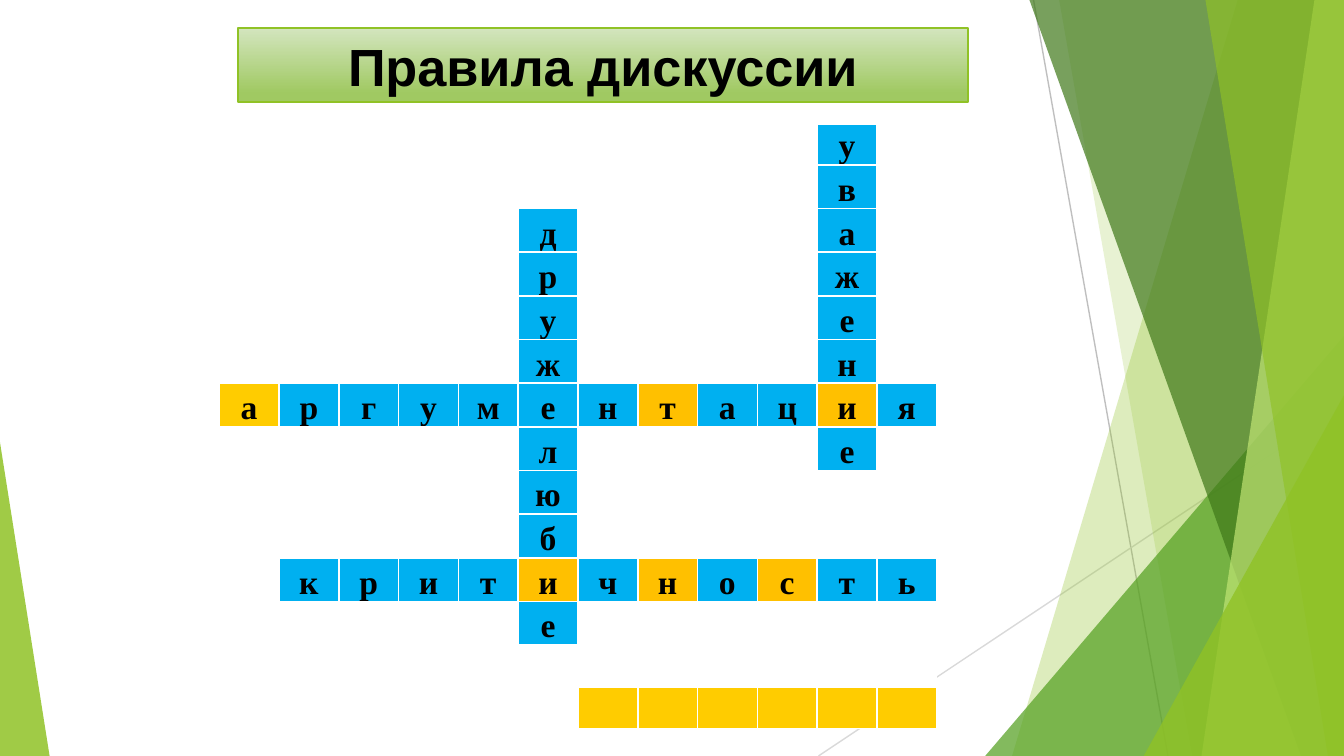
from lxml import etree
from pptx import Presentation
from pptx.dml.color import RGBColor
from pptx.enum import shapes, text
from pptx.oxml.ns import qn
from pptx.util import Pt

# Content: word, row, column, step down, step right
TITLE = "Правила дискуссии"
WORDS = [
    ("уважение", 0, 10, 1, 0),
    ("дружелюбие", 2, 5, 1, 0),
    ("аргументация", 6, 0, 0, 1),
    ("критичность", 10, 1, 0, 1),
]
KEY_LETTERS = [(6, 7), (6, 10), (10, 5), (10, 7), (10, 9)]
ANSWER_CELLS = [(6, 0)] + [(13, col) for col in range(6, 12)]

THEME = {
    "title_font": "Arial", "title_size": 28,
    "letter_font": "Times New Roman", "letter_size": 18, "empty_size": 10,
    "ink": "000000", "paper": "FFFFFF", "green": "90C226",
    "letter": "00B0F0", "key": "FFC000", "answer": "FFCC00",
    "title_top": "D3E5BE", "title_bottom": "A0C962",
}

# Layout, in points
WIDTH, HEIGHT = 720, 405
TITLE_BOX = (127.44, 15.12, 391, 39.6)
GRID_LEFT, GRID_TOP, GRID_WIDTH = 117.4, 66.4, 384.6
COLUMNS = 12
ROWS = [22] + [23.4] * 11 + [22.3] * 2

# Background: lines, bands reaching the right edge, corner triangles
LINES = [((553.7, 0), (625.7, HEIGHT), "BFBFBF"),
         ((WIDTH, 217.4), (438.5, HEIGHT), "D9D9D9")]
# Kind, geometry, colour, opacity %
# band: left edge at top, at bottom; triangle: left, top, width, apex position
FACETS = [
    ("band", (663.1, 542.2), THEME["green"], 30),
    ("band", (567.4, 638.6), THEME["green"], 20),
    ("triangle", (527.8, 180, 192.2, 1), "54A021", 72),
    ("band", (551.5, 697), "3F7819", 70),
    ("band", (704.2, 643.7), "C0E474", 70),
    ("band", (645.8, 711.4), THEME["green"], 65),
    ("triangle", (612.7, 211.7, 107.3, 1), THEME["green"], 80),
    ("triangle", (0, 236.9, 26.6, 0), THEME["green"], 85),
]


def rgb(value):
    return RGBColor.from_string(value)


def paint(fill, color):
    fill.solid()
    fill.fore_color.rgb = rgb(color)


def add_text(p, content, font, size):
    p.alignment = text.PP_ALIGN.CENTER
    r = p.add_run()
    r.text = content
    r.font.name, r.font.size, r.font.bold = font, Pt(size), True
    r.font.color.rgb = rgb(THEME["ink"])


def add_line(s, start, end, color):
    line = s.shapes.add_connector(shapes.MSO_CONNECTOR.STRAIGHT,
                                  *map(Pt, start + end))
    line.line.color.rgb = rgb(color)
    line.line.width = Pt(0.75)
    etree.SubElement(line._element.spPr, qn("a:effectLst"))


def add_facet(s, kind, geometry, color, opacity):
    if kind == "band":
        top, bottom = geometry
        outline = s.shapes.build_freeform(Pt(top), 0)
        outline.add_line_segments([(Pt(x), Pt(y)) for x, y in (
            (WIDTH, 0), (WIDTH, HEIGHT), (bottom, HEIGHT))])
        sp = outline.convert_to_shape()
    else:
        left, top, width, apex = geometry
        sp = s.shapes.add_shape(shapes.MSO_SHAPE.ISOSCELES_TRIANGLE, Pt(left),
                                Pt(top), Pt(width), Pt(HEIGHT - top))
        sp.adjustments[0] = apex
    sp.shadow.inherit = False
    sp.line.fill.background()
    paint(sp.fill, color)
    clr = sp._element.spPr.find(".//" + qn("a:srgbClr"))
    etree.SubElement(clr, qn("a:alpha"), val=str(opacity * 1000))


def format_title(s):
    sp = s.shapes.title
    s.shapes._spTree.append(sp._element)  # in front of the background
    sp.left, sp.top, sp.width, sp.height = map(Pt, TITLE_BOX)
    sp.fill.gradient()
    sp.fill.gradient_angle = 270
    first, last = sp.fill.gradient_stops
    first.color.rgb, first.position = rgb(THEME["title_top"]), 0
    last.color.rgb, last.position = rgb(THEME["title_bottom"]), 0.88
    sp.line.color.rgb = rgb(THEME["green"])
    sp.line.width = Pt(1)
    tf = sp.text_frame
    tf.auto_size = text.MSO_AUTO_SIZE.NONE
    tf.vertical_anchor = text.MSO_ANCHOR.MIDDLE
    tf.margin_left = tf.margin_right = Pt(3.6)
    tf.margin_top = tf.margin_bottom = Pt(1.6)
    add_text(tf.paragraphs[0], TITLE, THEME["title_font"], THEME["title_size"])


def add_borders(cell):
    tcPr = cell._tc.get_or_add_tcPr()
    for i, side in enumerate(("lnL", "lnR", "lnT", "lnB")):
        ln = etree.Element(qn("a:" + side), w=str(Pt(1)))
        solid = etree.SubElement(ln, qn("a:solidFill"))
        etree.SubElement(solid, qn("a:srgbClr"), val=THEME["paper"])
        tcPr.insert(i, ln)


def add_crossword(s):
    letters = {(row + i * down, col + i * right): letter
               for word, row, col, down, right in WORDS
               for i, letter in enumerate(word)}
    colors = dict.fromkeys(letters, THEME["letter"])
    colors.update(dict.fromkeys(KEY_LETTERS, THEME["key"]))
    colors.update(dict.fromkeys(ANSWER_CELLS, THEME["answer"]))

    table = s.shapes.add_table(len(ROWS), COLUMNS, Pt(GRID_LEFT), Pt(GRID_TOP),
                               Pt(GRID_WIDTH), Pt(sum(ROWS))).table
    table.first_row = table.horz_banding = False
    for column in table.columns:
        column.width = Pt(GRID_WIDTH / COLUMNS)
    for row, height in enumerate(ROWS):
        table.rows[row].height = Pt(height)
        for col in range(COLUMNS):
            cell = table.cell(row, col)
            cell.margin_left = cell.margin_right = cell.margin_top = Pt(0.7)
            cell.margin_bottom = 0
            cell.vertical_anchor = text.MSO_ANCHOR.BOTTOM
            paint(cell.fill, colors.get((row, col), THEME["paper"]))
            add_borders(cell)
            p = cell.text_frame.paragraphs[0]
            if (row, col) in letters:
                add_text(p, letters[row, col], THEME["letter_font"],
                         THEME["letter_size"])
            else:  # keeps an empty cell from stretching its row
                etree.SubElement(p._p, qn("a:endParaRPr"),
                                 sz=str(THEME["empty_size"] * 100))


def main():
    prs = Presentation()
    prs.slide_width, prs.slide_height = Pt(WIDTH), Pt(HEIGHT)
    s = prs.slides.add_slide(prs.slide_layouts[5])
    paint(s.background.fill, THEME["paper"])
    for line in LINES:
        add_line(s, *line)
    for facet in FACETS:
        add_facet(s, *facet)
    format_title(s)
    add_crossword(s)
    prs.save("out.pptx")


if __name__ == "__main__":
    main()
